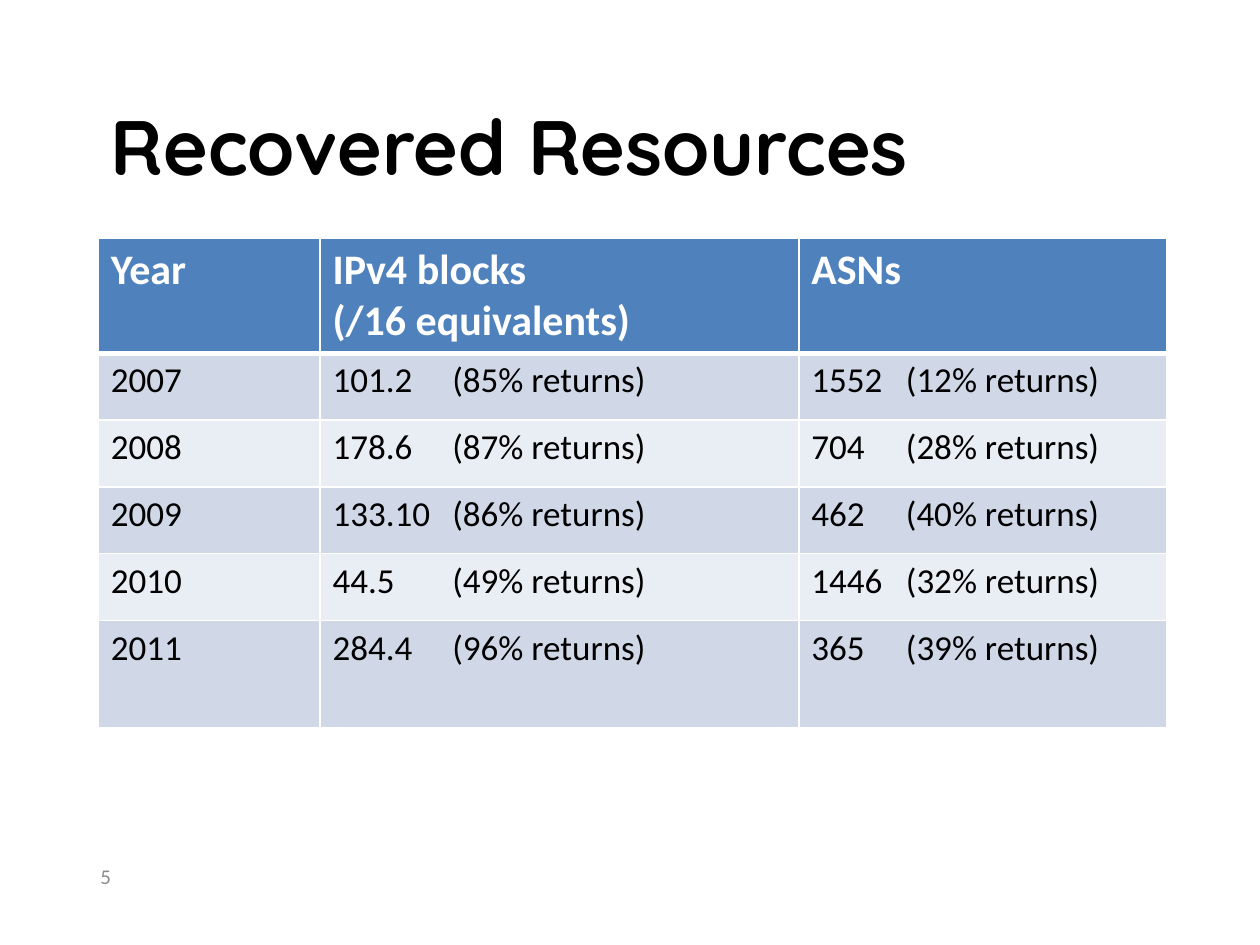
from lxml.etree import SubElement
from pptx import Presentation
from pptx.dml.color import RGBColor
from pptx.enum.text import MSO_ANCHOR, PP_ALIGN
from pptx.oxml.ns import qn
from pptx.util import Inches, Pt

# Content
TITLE = "Recovered Resources"
PAGE = "5"
HEAD = [["Year"], ["IPv4 blocks", "(/16 equivalents)"], ["ASNs"]]
ROWS = [
    ("2007", ("101.2", "85%"), ("1552", "12%")),
    ("2008", ("178.6", "87%"), ("704", "28%")),
    ("2009", ("133.10", "86%"), ("462", "40%")),
    ("2010", ("44.5", "49%"), ("1446", "32%")),
    ("2011", ("284.4", "96%"), ("365", "39%")),
]

# Style
COLORS = {"head": "4F81BD", "odd": "D0D8E8", "even": "E9EDF4",
          "white": "FFFFFF", "black": "000000", "gray": "8C8C8C"}
WIDTHS = [1.76, 3.8, 2.92]
HEIGHTS = [0.83] + [0.53] * 4 + [0.85]
TABS = [None, 0.95, 0.75]  # where the share of returns starts in each column


def color(name):
    return RGBColor.from_string(COLORS[name])


def write(para, text, size, tone, bold=False, face="Calibri"):
    run = para.add_run()
    run.text = text
    font = run.font
    font.name, font.size, font.bold = face, Pt(size), bold
    font.color.rgb = color(tone)


def add_tab(para, pos):
    stops = SubElement(para._p.get_or_add_pPr(), qn("a:tabLst"))
    SubElement(stops, qn("a:tab"), pos=str(Inches(pos)), algn="l")


def add_edges(cell, top, bottom):
    props = cell._tc.get_or_add_tcPr()
    for side, width in (("L", 1), ("R", 1), ("T", top), ("B", bottom)):
        line = SubElement(props, qn("a:ln" + side), w=str(Pt(width)))
        fill = SubElement(line, qn("a:solidFill"))
        SubElement(fill, qn("a:srgbClr"), val=COLORS["white"])


def paint(cell, tone, top=1, bottom=1):
    add_edges(cell, top, bottom)
    cell.fill.solid()
    cell.fill.fore_color.rgb = color(tone)


deck = Presentation()
deck.slide_width, deck.slide_height = Inches(10), Inches(7.5)
slide = deck.slides.add_slide(deck.slide_layouts[5])

# Title
title = slide.shapes.title
title.left, title.top = Inches(0.78), Inches(0.63)
title.width, title.height = Inches(9), Inches(1.04)
title.text_frame.vertical_anchor = MSO_ANCHOR.MIDDLE
para = title.text_frame.paragraphs[0]
para.alignment = PP_ALIGN.LEFT
write(para, TITLE, 44, "black", True, "Quicksand")

# Table grid
table = slide.shapes.add_table(
    len(HEIGHTS), len(WIDTHS), Inches(0.78), Inches(1.89),
    Inches(sum(WIDTHS)), Inches(sum(HEIGHTS))).table
for col, width in zip(table.columns, WIDTHS):
    col.width = Inches(width)
for row, height in zip(table.rows, HEIGHTS):
    row.height = Inches(height)

# Header row
for c, lines in enumerate(HEAD):
    cell = table.cell(0, c)
    paint(cell, "head", bottom=3)
    frame = cell.text_frame
    for i, text in enumerate(lines):
        para = frame.add_paragraph() if i else frame.paragraphs[0]
        write(para, text, 24, "white", True)

# Body rows
for r, row in enumerate(ROWS, 1):
    for c, value in enumerate(row):
        cell = table.cell(r, c)
        paint(cell, "odd" if r % 2 else "even", top=3 if r == 1 else 1)
        para = cell.text_frame.paragraphs[0]
        if TABS[c]:
            add_tab(para, TABS[c])
            count, share = value
            value = f"{count}\t({share} returns)"
        write(para, value, 20, "black")

# Page number
box = slide.shapes.add_textbox(Inches(0.5), Inches(6.75), Inches(0.48), Inches(0.4))
frame = box.text_frame
frame.word_wrap = True
frame.vertical_anchor = MSO_ANCHOR.MIDDLE
para = frame.paragraphs[0]
para.alignment = PP_ALIGN.RIGHT
write(para, PAGE, 12, "gray")

deck.save("out.pptx")
